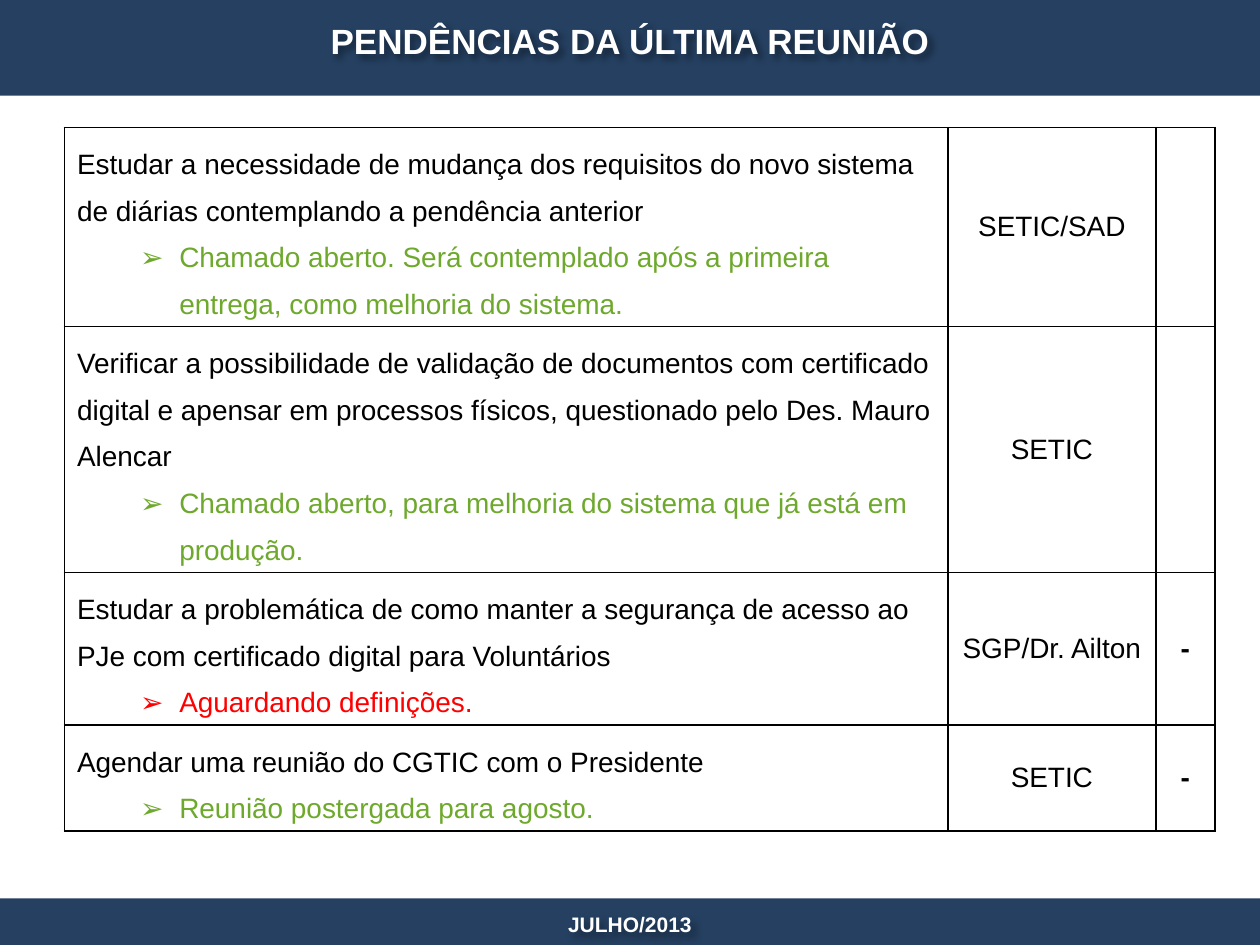
from lxml.etree import SubElement
from pptx import Presentation
from pptx.dml.color import RGBColor
from pptx.enum.shapes import MSO_SHAPE
from pptx.enum.text import MSO_ANCHOR, MSO_AUTO_SIZE, PP_ALIGN
from pptx.oxml import parse_xml
from pptx.oxml.ns import nsdecls, qn
from pptx.util import Cm, Pt

COLORS = {
    "band": "254061",
    "white": "FFFFFF",
    "black": "000000",
    "done": "6EA92D",
    "waiting": "FF0000",
}

COLUMNS = [17.81, 4.19, 1.19]
ROWS = [
    (4.01, "Estudar a necessidade de mudança dos requisitos do novo sistema de diárias "
     "contemplando a pendência anterior",
     "Chamado aberto. Será contemplado após a primeira entrega, como melhoria do sistema.",
     "done", "SETIC/SAD", ""),
    (4.96, "Verificar a possibilidade de validação de documentos com certificado digital e "
     "apensar em processos físicos, questionado pelo Des. Mauro Alencar",
     "Chamado aberto, para melhoria do sistema que já está em produção.",
     "done", "SETIC", ""),
    (3.07, "Estudar a problemática de como manter a segurança de acesso ao PJe com "
     "certificado digital para Voluntários",
     "Aguardando definições.", "waiting", "SGP/Dr. Ailton", "-"),
    (2.13, "Agendar uma reunião do CGTIC com o Presidente",
     "Reunião postergada para agosto.", "done", "SETIC", "-"),
]


def rgb(name):
    return RGBColor.from_string(COLORS[name])


def style(p, size, color, bold=False, align=PP_ALIGN.LEFT):
    p.alignment = align
    p.font.name = "Arial"
    p.font.size = Pt(size)
    p.font.bold = bold
    p.font.color.rgb = rgb(color)


def add_band(slide, left, top, width, height):
    sp = slide.shapes.add_shape(MSO_SHAPE.RECTANGLE, Cm(left), Cm(top), Cm(width), Cm(height))
    sp.shadow.inherit = False
    sp.fill.solid()
    sp.fill.fore_color.rgb = rgb("band")
    sp.line.fill.background()


def add_text_shadow(sp):
    sp.shadow.inherit = False
    effects = sp._element.spPr.find(qn("a:effectLst"))
    effects.append(parse_xml(
        f'<a:outerShdw {nsdecls("a")} blurRad="50800" dist="38100" dir="2700000" algn="tl">'
        f'<a:srgbClr val="{COLORS["black"]}"><a:alpha val="40000"/></a:srgbClr></a:outerShdw>'))


def set_heading(sp, text, size):
    tf = sp.text_frame
    tf.text = text
    tf.word_wrap = True
    tf.auto_size = MSO_AUTO_SIZE.NONE
    tf.vertical_anchor = MSO_ANCHOR.MIDDLE
    style(tf.paragraphs[0], size, "white", True, PP_ALIGN.CENTER)
    add_text_shadow(sp)


def add_header(slide, left, top, width, height):
    add_band(slide, left, top, width, height)
    title = slide.shapes.title
    title.left, title.top = Cm(left + 1.27), Cm(top + 0.15)
    title.width, title.height = Cm(width - 2.54), Cm(1.4)
    set_heading(title, "PENDÊNCIAS DA ÚLTIMA REUNIÃO", 20)
    slide.shapes._spTree.append(title._element)


def add_footer(slide, left, top, width, height):
    add_band(slide, left, top, width, height)
    box = slide.shapes.add_textbox(Cm(left), Cm(top + 0.03), Cm(width), Cm(height + 0.05))
    set_heading(box, "JULHO/2013", 12)


def set_borders(cell):
    tc_pr = cell._tc.get_or_add_tcPr()
    for i, side in enumerate(("lnL", "lnR", "lnT", "lnB")):
        tc_pr.insert(i, parse_xml(
            f'<a:{side} {nsdecls("a")} w="12700"><a:solidFill>'
            f'<a:srgbClr val="{COLORS["black"]}"/></a:solidFill></a:{side}>'))


def fill_task(cell, task, status, color):
    tf = cell.text_frame
    p = tf.paragraphs[0]
    p.text = task
    p.line_spacing = 1.5
    style(p, 16, "black")

    p = tf.add_paragraph()
    p.text = status
    p.line_spacing = 1.5
    p_pr = p._p.get_or_add_pPr()
    p_pr.set("marL", str(Cm(2.06)))
    p_pr.set("indent", str(-Cm(0.79)))
    SubElement(p_pr, qn("a:buFont")).set("typeface", "Arial")
    SubElement(p_pr, qn("a:buChar")).set("char", "➢")
    style(p, 16, color)


def fill_centered(cell, text, bold=False):
    cell.vertical_anchor = MSO_ANCHOR.MIDDLE
    p = cell.text_frame.paragraphs[0]
    p.text = text
    style(p, 16, "black", bold, PP_ALIGN.CENTER)


def add_pending_table(slide, left, top):
    height = sum(row[0] for row in ROWS)
    frame = slide.shapes.add_table(
        len(ROWS), len(COLUMNS), Cm(left), Cm(top), Cm(sum(COLUMNS)), Cm(height))
    table = frame.table
    table.first_row = table.horz_banding = False
    for column, width in zip(table.columns, COLUMNS):
        column.width = Cm(width)
    for row, (row_height, task, status, color, owner, mark) in zip(table.rows, ROWS):
        row.height = Cm(row_height)
        task_cell, owner_cell, mark_cell = row.cells
        fill_task(task_cell, task, status, color)
        fill_centered(owner_cell, owner)
        owner_cell.margin_left = owner_cell.margin_right = Cm(0.18)
        owner_cell.margin_top = owner_cell.margin_bottom = 0
        fill_centered(mark_cell, mark, True)
        for cell in row.cells:
            cell.fill.background()
            set_borders(cell)


def main():
    prs = Presentation()
    prs.slide_width, prs.slide_height = Cm(25.4), Cm(19.05)
    slide = prs.slides.add_slide(prs.slide_layouts[5])
    add_footer(slide, 0, 18.11, 25.4, 0.94)
    add_header(slide, 0, -0.03, 25.4, 1.96)
    add_pending_table(slide, 1.3, 2.57)
    prs.save("out.pptx")


if __name__ == "__main__":
    main()
